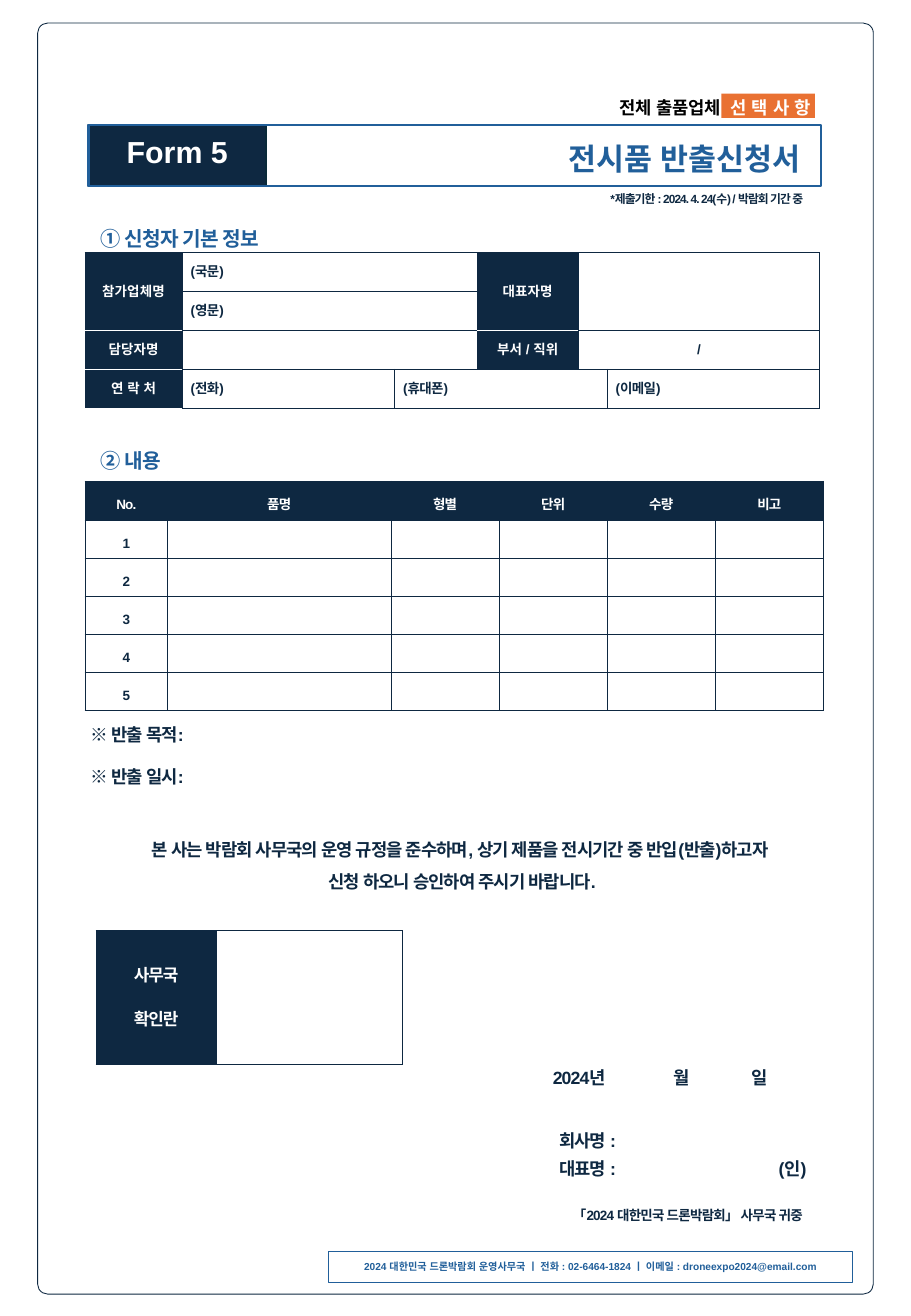
from lxml import etree
from pptx import Presentation
from pptx.dml.color import RGBColor
from pptx.enum import shapes, text
from pptx.oxml import ns
from pptx.util import Inches, Pt

COLORS = {"navy": "0E2841", "blue": "215F9A", "orange": "E97132",
          "edge": "092A39", "white": "FFFFFF", "black": "000000"}
ALIGN = {"l": text.PP_ALIGN.LEFT, "c": text.PP_ALIGN.CENTER,
         "r": text.PP_ALIGN.RIGHT, "j": text.PP_ALIGN.JUSTIFY}
MIDDLE = text.MSO_ANCHOR.MIDDLE
HANGING = 0.19


def rgb(name):
    return RGBColor.from_string(COLORS[name])


def write(frame, lines, size=10.5, color="navy", align="l", spacing=None,
          tight=True, hanging=False, gap=0):
    """Fill a text frame; a line is a string or a list of (text, colour) runs."""
    for index, line in enumerate(lines):
        paragraph = frame.paragraphs[0] if index == 0 else frame.add_paragraph()
        paragraph.alignment = ALIGN[align]
        if spacing:
            paragraph.line_spacing = spacing
        if index and gap:
            paragraph.space_before = Pt(gap)
        if hanging:
            properties = paragraph._p.get_or_add_pPr()
            properties.set("marL", str(Inches(HANGING)))
            properties.set("indent", str(Inches(-HANGING)))
        if not line:
            etree.SubElement(paragraph._p, ns.qn("a:endParaRPr"), sz=str(size * 100))
            continue
        for words, run_color in [(line, color)] if isinstance(line, str) else line:
            run = paragraph.add_run()
            run.text = words
            run.font.size, run.font.bold, run.font.name = Pt(size), True, "Arial"
            run.font.color.rgb = rgb(run_color)
            properties = run._r.get_or_add_rPr()
            if tight:
                properties.set("spc", "-50")
            etree.SubElement(properties, ns.qn("a:ea"), typeface="Arial")


def add_text(slide, box, lines, middle=False, grow=True, wrap=True, **fmt):
    frame = slide.shapes.add_textbox(*map(Inches, box)).text_frame
    frame.word_wrap = wrap
    if middle:
        frame.vertical_anchor = MIDDLE
    if grow:
        frame.auto_size = text.MSO_AUTO_SIZE.SHAPE_TO_FIT_TEXT
    write(frame, lines, **fmt)


def add_box(slide, box, fill=None, line=None, width=0.5,
            kind=shapes.MSO_SHAPE.RECTANGLE):
    shape = slide.shapes.add_shape(kind, *map(Inches, box))
    shape.shadow.inherit = False
    if fill:
        shape.fill.solid()
        shape.fill.fore_color.rgb = rgb(fill)
    else:
        shape.fill.background()
    if line:
        shape.line.color.rgb = rgb(line)
        shape.line.width = Pt(width)
    else:
        shape.line.fill.background()
    return shape


def add_grid(slide, left, top, widths, heights):
    box = (left, top, sum(widths), sum(heights))
    table = slide.shapes.add_table(len(heights), len(widths),
                                   *map(Inches, box)).table
    table.first_row = table.horz_banding = False
    for column, width in zip(table.columns, widths):
        column.width = Inches(width)
    for row, height in zip(table.rows, heights):
        row.height = Inches(height)
    return table


def style_cell(cell, lines=("",), label=False, top="navy", bottom="navy",
               inset=0.04, **fmt):
    cell.vertical_anchor = MIDDLE
    cell.margin_left, cell.margin_right = Inches(inset), Inches(0.04)
    cell.margin_top = cell.margin_bottom = Inches(0.01)
    properties = cell._tc.get_or_add_tcPr()
    for side, color in zip("LRTB", ("navy", "navy", top, bottom)):
        line = etree.SubElement(properties, ns.qn(f"a:ln{side}"), w=str(Pt(0.5)))
        fill = etree.SubElement(line, ns.qn("a:solidFill"))
        etree.SubElement(fill, ns.qn("a:srgbClr"), val=COLORS[color])
    if label:
        cell.fill.solid()
        cell.fill.fore_color.rgb = rgb("navy")
    else:
        cell.fill.background()
    write(cell.text_frame, lines, **{"size": 8, "color": "white" if label else "navy",
                                     **fmt})


def add_header(slide):
    add_box(slide, (0.73, 1.03, 1.46, 0.5), "navy", "edge", 1.5)
    add_box(slide, (0.73, 1.03, 6.03, 0.5), line="blue", width=1.5)
    add_text(slide, (0.93, 1.05, 1.06, 0.4), ["Form 5"], wrap=False,
             size=18, color="white", align="c", tight=False)
    title = slide.shapes.title
    title.left, title.top, title.width, title.height = map(
        Inches, (2.28, 1.03, 4.41, 0.46))
    title.text_frame.vertical_anchor = MIDDLE
    title.text_frame.auto_size = text.MSO_AUTO_SIZE.SHAPE_TO_FIT_TEXT
    write(title.text_frame, ["전시품 반출신청서"], size=18, color="blue",
          align="r", spacing=1.3, tight=False)
    add_box(slide, (5.94, 0.77, 0.77, 0.2), "orange")
    add_text(slide, (4.34, 0.77, 2.43, 0.22),
             [[("전체 출품업체 ", "black"), (" 선 택 사 항", "white")]],
             middle=True, grow=False, align="r", tight=False)
    add_text(slide, (3.18, 1.48, 3.53, 0.26),
             ["*제출기한 : 2024. 4. 24(수) / 박람회 기간 중"], middle=True,
             size=7, align="r", spacing=1.5, hanging=True)


def add_applicant_table(slide):
    table = add_grid(slide, 0.7, 2.08, [0.8, 1.75, 0.68, 0.83, 0.24, 1.75],
                     [0.32] * 4)
    merges = [(0, 0, 1, 0), (0, 1, 0, 2), (0, 3, 1, 3), (0, 4, 1, 5), (1, 1, 1, 2),
              (2, 1, 2, 2), (2, 4, 2, 5), (3, 2, 3, 4)]
    for row, column, last_row, last_column in merges:
        table.cell(row, column).merge(table.cell(last_row, last_column))
    labels = {(0, 0): "참가업체명", (0, 3): "대표자명", (2, 0): "담당자명",
              (2, 3): "부서 / 직위", (3, 0): "연 락 처"}
    prompts = {(0, 1): "(국문)", (1, 1): "(영문)", (3, 1): "(전화)",
               (3, 2): "(휴대폰)", (3, 5): "(이메일)"}
    for row in range(4):
        for column in range(6):
            cell, place = table.cell(row, column), (row, column)
            if column == 0 or (column == 3 and row < 3):
                style_cell(cell, [labels.get(place, "")], label=True, align="c",
                           top="white" if row else "navy", bottom="white",
                           tight=False)
            elif place == (2, 4):
                style_cell(cell, ["/"], align="c")
            else:
                style_cell(cell, [prompts.get(place, "")], inset=0.07)


def add_item_table(slide):
    headings = ["No.", "품명", "형별", "단위", "수량", "비고"]
    table = add_grid(slide, 0.7, 3.96, [0.68, 1.84] + [0.89] * 4,
                     [0.32] + [0.313] * 5)
    for column, heading in enumerate(headings):
        style_cell(table.cell(0, column), [heading], label=True, align="c",
                   spacing=1.5)
        for row in range(1, 6):
            number = str(row) if column == 0 else ""
            style_cell(table.cell(row, column), [number], align="c", spacing=1.6)


def add_signature(slide):
    office = add_grid(slide, 0.79, 7.66, [0.99, 1.53], [1.1])
    style_cell(office.cell(0, 0), ["사무국", "확인란"], label=True, size=10,
               align="c", gap=14.5)
    style_cell(office.cell(0, 1))
    fields = [("2024년 ", 4.29, 8.64, "c"), ("월", 5.12, 8.64, "c"),
              ("일", 5.76, 8.64, "c"), ("회사명 :", 4.18, 9.16, "r"),
              ("대표명 :", 4.18, 9.39, "r"), ("(인)", 6.03, 9.39, "c")]
    for words, left, top, align in fields:
        add_text(slide, (left, top, 0.99, 0.34), [words], align=align,
                 spacing=1.5, hanging=True)
    add_text(slide, (3.18, 9.83, 3.53, 0.28),
             ["「2024 대한민국 드론박람회」 사무국 귀중"], middle=True,
             size=8, align="r", spacing=1.5, hanging=True)


def add_contact(slide):
    contact = add_box(slide, (2.7, 10.3, 4.32, 0.25), line="blue", width=0.25)
    contact.text_frame.vertical_anchor = MIDDLE
    write(contact.text_frame,
          ["2024 대한민국 드론박람회 운영사무국 ㅣ 전화 : 02-6464-1824 ㅣ "
           "이메일 : droneexpo2024@email.com"],
          size=6, color="blue", align="c", tight=False)


def main():
    deck = Presentation()
    deck.slide_width, deck.slide_height = Inches(7.5), Inches(10.83)
    slide = deck.slides.add_slide(deck.slide_layouts[5])
    border = add_box(slide, (0.31, 0.19, 6.88, 10.46), line="navy",
                     kind=shapes.MSO_SHAPE.ROUNDED_RECTANGLE)
    border.adjustments[0] = 0.012
    add_header(slide)
    for heading, top in [("① 신청자 기본 정보", 1.71), ("② 내용", 3.54)]:
        add_text(slide, (0.73, top, 6.03, 0.37), [heading], size=12,
                 color="blue", spacing=1.5)
    add_applicant_table(slide)
    add_item_table(slide)
    add_text(slide, (0.65, 5.73, 6.03, 0.75), ["※ 반출 목적: ", "※ 반출 일시:"],
             align="j", spacing=2.0, hanging=True)
    add_text(slide, (0.79, 6.77, 6.03, 0.6),
             ["본 사는 박람회 사무국의 운영 규정을 준수하며, "
              "상기 제품을 전시기간 중 반입(반출)하고자 ",
              "신청 하오니 승인하여 주시기 바랍니다."],
             align="c", spacing=1.5, hanging=True)
    add_signature(slide)
    add_contact(slide)
    deck.save("out.pptx")


if __name__ == "__main__":
    main()
